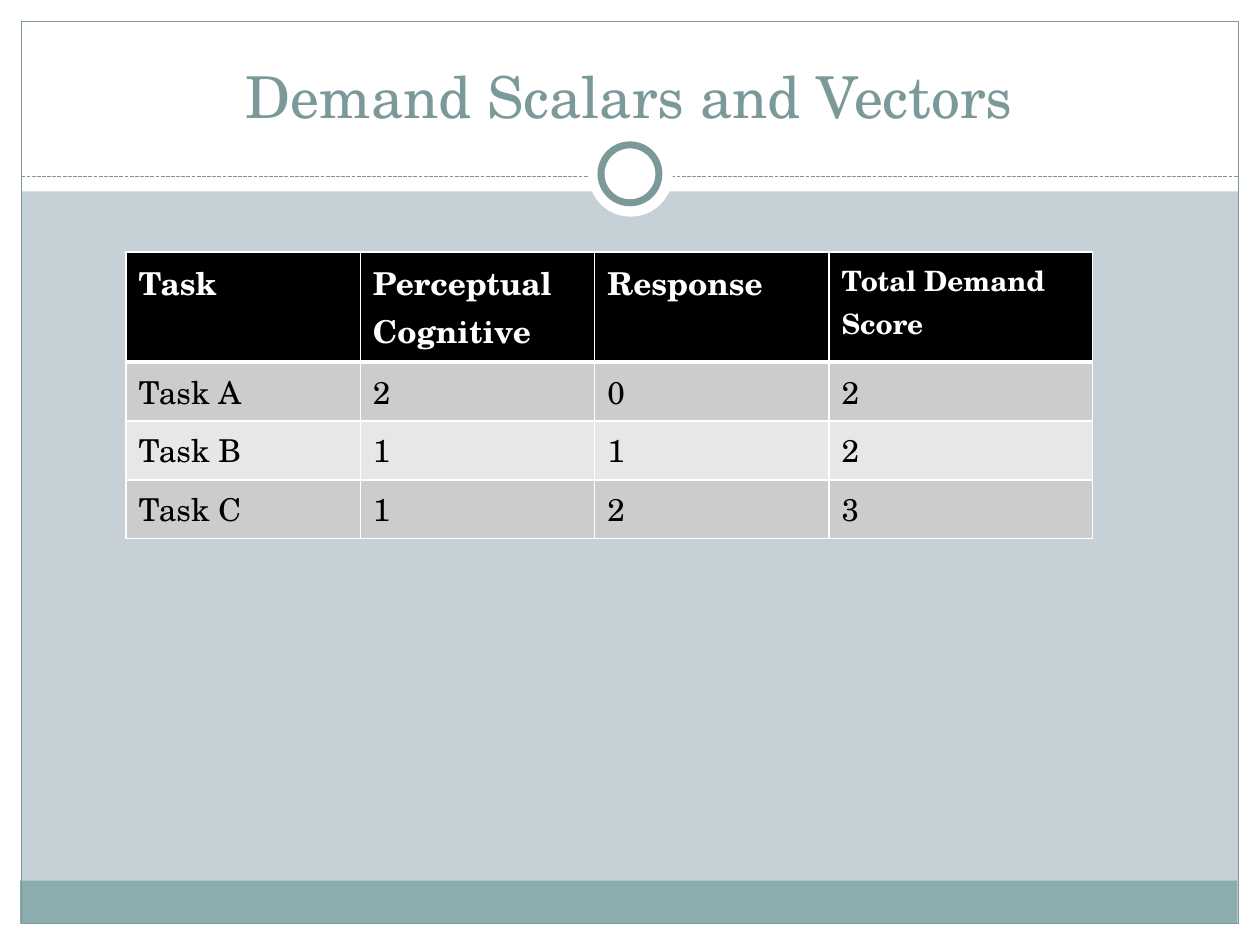
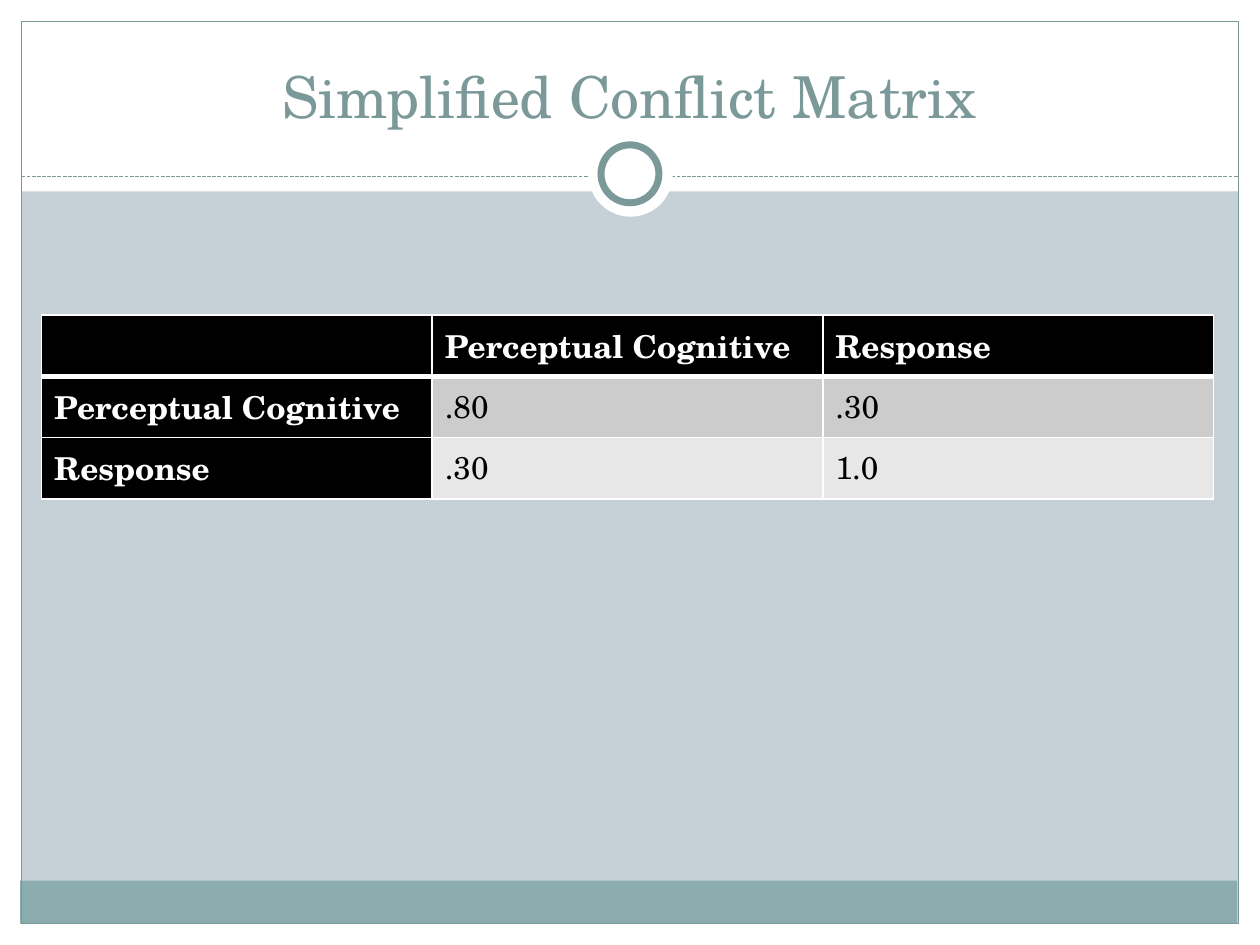
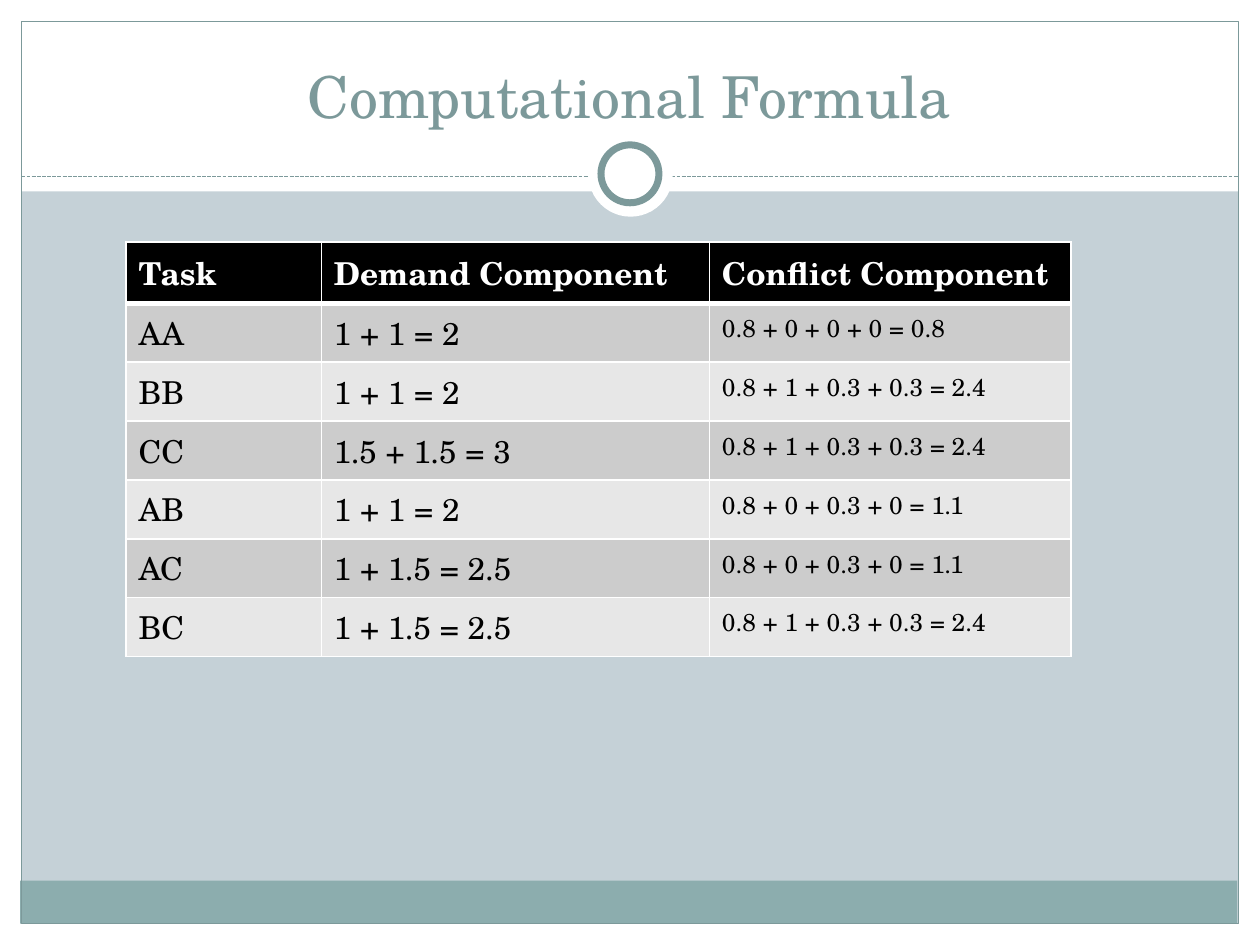
from dataclasses import dataclass

from pptx import Presentation
from pptx.dml.color import RGBColor
from pptx.enum.dml import MSO_LINE
from pptx.enum.shapes import MSO_CONNECTOR, MSO_SHAPE
from pptx.enum.text import MSO_ANCHOR, MSO_AUTO_SIZE, PP_ALIGN
from pptx.oxml.ns import qn
from pptx.slide import Slide, SlideLayout
from pptx.table import _Cell
from pptx.text.text import TextFrame
from pptx.util import Inches, Pt
from lxml import etree

RECT, OVAL = MSO_SHAPE.RECTANGLE, MSO_SHAPE.OVAL
STRAIGHT = MSO_CONNECTOR.STRAIGHT
DASH = MSO_LINE.SQUARE_DOT
BOTTOM, CENTER = MSO_ANCHOR.BOTTOM, PP_ALIGN.CENTER
NO_FIT = MSO_AUTO_SIZE.NONE

WHITE = RGBColor(0xFF, 0xFF, 0xFF)
BLACK = RGBColor(0x00, 0x00, 0x00)
MIST = RGBColor(0xC5, 0xD1, 0xD7)
SAGE = RGBColor(0x8C, 0xAD, 0xAE)
TEAL = RGBColor(0x7C, 0x99, 0x9A)
BANDS = (RGBColor(0xCC, 0xCC, 0xCC), RGBColor(0xE7, 0xE7, 0xE7))

FONT = "TeX Gyre Schola"
TITLE_SIZE = 33
CELL_SIZE = 18
ROW_HEIGHT = 0.41
THIN, THICK = 1, 3


@dataclass(frozen=True)
class Panel:
    box: tuple[float, float, float, float]
    fill: RGBColor | None = WHITE
    line: float = 0
    shape: MSO_SHAPE = RECT


@dataclass(frozen=True)
class Grid:
    """A titled table; the last column may have its own head and body sizes."""
    title: str
    left: float
    top: float
    widths: tuple[float, ...]
    rows: tuple[tuple[str, ...], ...]
    last_head: int = CELL_SIZE
    last_body: int = CELL_SIZE
    side_head: bool = False


MARGINS = (
    Panel((0, 7.33, 10, 0.17)),
    Panel((0, 0, 10, 1.52)),
    Panel((0, 0, 0.17, 7.5)),
    Panel((9.83, 0, 0.17, 7.5)),
    Panel((0.16, 6.99, 9.66, 0.34), SAGE),
    Panel((0.17, 0.17, 9.66, 7.16), None, 0.75),
)
RING = (
    Panel((4.67, 1.05, 0.67, 0.67), shape=OVAL),
    Panel((4.77, 1.15, 0.46, 0.46), line=4, shape=OVAL),
)

GRIDS = (
    Grid(
        "Demand Scalars and Vectors", 1, 2, (1.86, 1.86, 1.86, 2.09),
        (
            ("Task", "Perceptual Cognitive", "Response", "Total Demand Score"),
            ("Task A", "2", "0", "2"),
            ("Task B", "1", "1", "2"),
            ("Task C", "1", "2", "3"),
        ),
        last_head=16,
    ),
    Grid(
        "Simplified Conflict Matrix", 0.33, 2.5, (3.1, 3.1, 3.1),
        (
            ("", "Perceptual Cognitive", "Response"),
            ("Perceptual Cognitive", ".80", ".30"),
            ("Response", ".30", "1.0"),
        ),
        side_head=True,
    ),
    Grid(
        "Computational Formula", 1, 1.92, (1.55, 3.08, 2.87),
        (
            ("Task", "Demand Component", "Conflict Component"),
            ("AA", "1 + 1 = 2", "0.8 + 0 + 0 + 0 = 0.8"),
            ("BB", "1 + 1 = 2", "0.8 + 1 + 0.3 + 0.3 = 2.4"),
            ("CC", "1.5 + 1.5 = 3", "0.8 + 1 + 0.3 + 0.3 = 2.4"),
            ("AB", "1 + 1 = 2", "0.8 + 0 + 0.3 + 0 = 1.1"),
            ("AC", "1 + 1.5 = 2.5", "0.8 + 0 + 0.3 + 0 = 1.1"),
            ("BC", "1 + 1.5 = 2.5", "0.8 + 1 + 0.3 + 0.3 = 2.4"),
        ),
        last_body=14,
    ),
)


def style_text(frame: TextFrame, size: int, color: RGBColor, bold: bool = False) -> None:
    for part in frame.paragraphs:
        for run in part.runs:
            run.font.name = FONT
            run.font.size = Pt(size)
            run.font.bold = bold
            run.font.color.rgb = color


def draw_panel(slide: Slide, panel: Panel) -> None:
    shape = slide.shapes.add_shape(panel.shape, *map(Inches, panel.box))
    shape.shadow.inherit = False
    if panel.fill is None:
        shape.fill.background()
    else:
        shape.fill.solid()
        shape.fill.fore_color.rgb = panel.fill
    if panel.line:
        shape.line.color.rgb = TEAL
        shape.line.width = Pt(panel.line)
    else:
        shape.line.fill.background()


def draw_rule(slide: Slide) -> None:
    rule = slide.shapes.add_connector(
        STRAIGHT, Inches(0.17), Inches(1.4), Inches(9.83), Inches(1.4))
    rule.line.color.rgb = TEAL
    rule.line.width = Pt(0.75)
    rule.line.dash_style = DASH
    etree.SubElement(rule.element.spPr, qn("a:effectLst"))


def prepare_layout(layout: SlideLayout) -> None:
    """Keep only the title placeholder and set its place and the background."""
    layout.background.fill.solid()
    layout.background.fill.fore_color.rgb = MIST
    title, *others = layout.placeholders
    for other in others:
        layout.shapes.element.remove(other.element)
    title.left, title.top = Inches(0.33), Inches(0.25)
    title.width, title.height = Inches(9.33), Inches(0.83)
    title.text_frame.vertical_anchor = BOTTOM
    title.text_frame.auto_size = NO_FIT


def share_frame(slide: Slide) -> None:
    """Draw the frame on a slide, then move it to the layout for all slides."""
    for panel in MARGINS:
        draw_panel(slide, panel)
    draw_rule(slide)
    for panel in RING:
        draw_panel(slide, panel)
    for shape in list(slide.shapes):
        if not shape.is_placeholder:
            slide.slide_layout.shapes.element.append(shape.element)


def draw_borders(cell: _Cell, top: int, bottom: int) -> None:
    props = cell._tc.get_or_add_tcPr()
    for side, width in (("L", THIN), ("R", THIN), ("T", top), ("B", bottom)):
        line = etree.SubElement(props, qn(f"a:ln{side}"), w=str(Pt(width)))
        fill = etree.SubElement(line, qn("a:solidFill"))
        etree.SubElement(fill, qn("a:srgbClr"), val=str(WHITE))


def draw_grid(slide: Slide, grid: Grid) -> None:
    count, last = len(grid.rows), len(grid.widths) - 1
    table = slide.shapes.add_table(
        count, last + 1, Inches(grid.left), Inches(grid.top),
        Inches(sum(grid.widths)), Inches(ROW_HEIGHT * count)).table
    table.horz_banding = False
    for column, width in zip(table.columns, grid.widths):
        column.width = Inches(width)
    for r, texts in enumerate(grid.rows):
        table.rows[r].height = Inches(ROW_HEIGHT)
        for c, text in enumerate(texts):
            cell = table.cell(r, c)
            head = r == 0 or (grid.side_head and c == 0)
            size = CELL_SIZE
            if c == last:
                size = grid.last_head if r == 0 else grid.last_body
            cell.text_frame.text = text
            style_text(cell.text_frame, size, WHITE if head else BLACK, head)
            draw_borders(cell, THICK if r == 1 else THIN, THICK if r == 0 else THIN)
            cell.fill.solid()
            cell.fill.fore_color.rgb = BLACK if head else BANDS[(r - 1) % 2]


def main() -> None:
    deck = Presentation()
    deck.slide_width, deck.slide_height = Inches(10), Inches(7.5)
    layout = deck.slide_layouts[5]
    prepare_layout(layout)
    for index, grid in enumerate(GRIDS):
        slide = deck.slides.add_slide(layout)
        if index == 0:
            share_frame(slide)
        title = slide.shapes.title.text_frame
        title.text = grid.title
        title.paragraphs[0].alignment = CENTER
        style_text(title, TITLE_SIZE, TEAL)
        draw_grid(slide, grid)
    deck.save("out.pptx")


if __name__ == "__main__":
    main()
